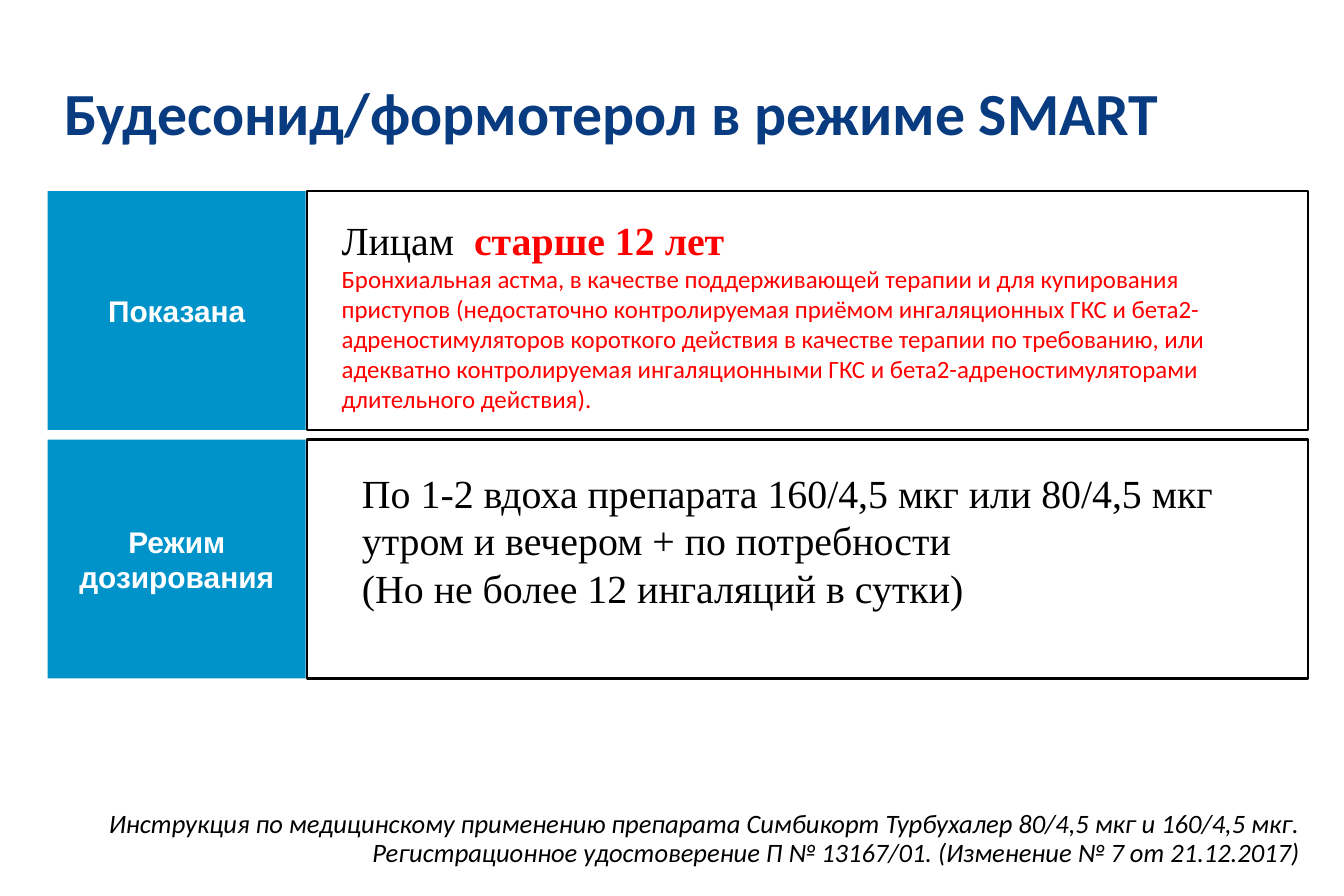
from pptx import Presentation
from pptx.dml.color import RGBColor
from pptx.enum.shapes import MSO_SHAPE
from pptx.enum.text import MSO_ANCHOR, PP_ALIGN
from pptx.util import Inches, Pt

RECT = MSO_SHAPE.RECTANGLE
TOP, MID, LOW = MSO_ANCHOR.TOP, MSO_ANCHOR.MIDDLE, MSO_ANCHOR.BOTTOM
LEFT, MIDST, RIGHT = PP_ALIGN.LEFT, PP_ALIGN.CENTER, PP_ALIGN.RIGHT
NAVY = RGBColor(0x08, 0x3B, 0x7F)
BLUE = RGBColor(0x00, 0x93, 0xC9)
RED = RGBColor(0xFF, 0x00, 0x00)
BLACK = RGBColor(0x00, 0x00, 0x00)
WHITE = RGBColor(0xFF, 0xFF, 0xFF)

CELL = Inches(0.08)
HEAD = dict(name="Calibri", size=Pt(36), bold=True), NAVY
LABEL = dict(name="Arial", size=Pt(18), bold=True), WHITE
BODY = dict(name="Times New Roman", size=Pt(24)), BLACK
STRONG = dict(name="Times New Roman", size=Pt(24), bold=True), RED
DETAIL = dict(name="Calibri", size=Pt(15), bold=False), RED
SOURCE = dict(name="Calibri", size=Pt(16), italic=True), BLACK


def grid(*cells):
    return [int(n * CELL) for n in cells]


def write(shape, paras, anchor=TOP, align=LEFT, space=1.0, inset=0.1):
    frame = shape.text_frame
    form = dict(word_wrap=True, vertical_anchor=anchor, margin_left=Inches(inset))
    for key, val in form.items():
        setattr(frame, key, val)
    for i, runs in enumerate(paras):
        para = frame.add_paragraph() if i else frame.paragraphs[0]
        para.alignment = align
        para.line_spacing = space
        for text, (style, color) in runs:
            for j, line in enumerate(text.split("\n")):
                if j:
                    para.add_line_break()
                run = para.add_run()
                run.text = line
                for key, val in style.items():
                    setattr(run.font, key, val)
                run.font.color.rgb = color


deck = Presentation()
deck.slide_width = Inches(11.25)
deck.slide_height = Inches(7.5)
slide = deck.slides.add_slide(deck.slide_layouts[6])
shapes = slide.shapes

title = shapes.add_textbox(*grid(5.5, 8.13, 130.63, 8))
write(title, [[("Будесонид/формотерол в режиме SMART", HEAD)]], LOW, space=0.9)

rows = [
    ("Показана", (32, 22, 103.13, 22.13), [
        [("Лицам  ", BODY), ("старше 12 лет", STRONG)],
        [("Бронхиальная астма, в качестве поддерживающей терапии и для "
          "купирования приступов (недостаточно контролируемая приёмом "
          "ингаляционных ГКС и бета2-адреностимуляторов короткого действия "
          "в качестве терапии по требованию, или адекватно контролируемая "
          "ингаляционными ГКС и бета2-адреностимуляторами длительного "
          "действия).", DETAIL)],
    ]),
    ("Режим дозирования", (34.13, 48.38, 101.13, 16.38), [
        [("По 1-2 вдоха препарата 160/4,5 мкг или 80/4,5 мкг утром и "
          "вечером + по потребности\n(Но не более 12 ингаляций в сутки)", BODY)],
    ]),
]
for i, (name, place, paras) in enumerate(rows):
    top = 20 + 26 * i
    frame = shapes.add_shape(RECT, *grid(32.13, top, 104.75, 25))
    frame.shadow.inherit = False
    frame.fill.background()
    frame.line.color.rgb = BLACK
    frame.line.width = Pt(1.5)

    label = shapes.add_shape(RECT, *grid(5, top, 27, 25))
    label.shadow.inherit = False
    label.fill.solid()
    label.fill.fore_color.rgb = BLUE
    label.line.fill.background()
    write(label, [[(name, LABEL)]], MID, MIDST)

    write(shapes.add_textbox(*grid(*place)), paras, inset=0.3)

note = shapes.add_textbox(*grid(6.75, 84.25, 130.5, 7.38))
write(note, [[("Инструкция по медицинскому применению препарата Симбикорт "
               "Турбухалер 80/4,5 мкг и 160/4,5 мкг. Регистрационное "
               "удостоверение П № 13167/01. (Изменение № 7 от 21.12.2017)",
               SOURCE)]], align=RIGHT, space=0.9)

deck.save("out.pptx")
